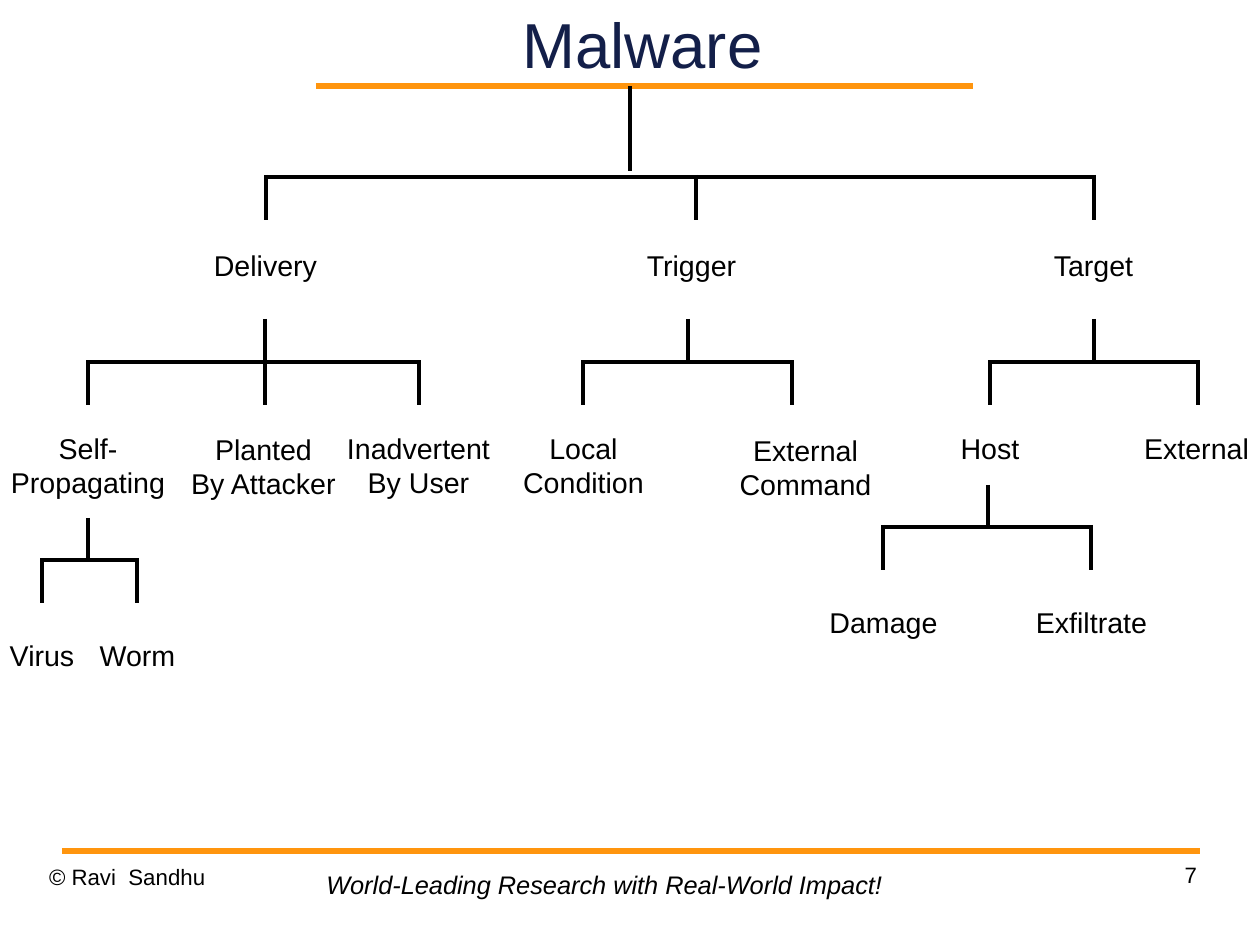
from lxml.etree import SubElement
from pptx import Presentation
from pptx.dml.color import RGBColor
from pptx.enum.shapes import MSO_CONNECTOR
from pptx.enum.text import MSO_ANCHOR, MSO_AUTO_SIZE, PP_ALIGN
from pptx.oxml.ns import qn
from pptx.util import Pt

PX = 8000
BLACK = RGBColor(0x00, 0x00, 0x00)
NAVY = RGBColor(0x13, 0x1F, 0x49)
ORANGE = RGBColor(0xFF, 0x95, 0x0E)

TITLE = "Malware"
COPYRIGHT = "© Ravi  Sandhu"
MOTTO = "World-Leading Research with Real-World Impact!"
PAGE = "7"

RULES = [(316, 973, 86), (62, 1200, 851)]

# (stem x, stem top, stem bottom, bar y, drop x positions)
BRANCHES = [
    (630, 86, 171, 177, (266, 696, 1094)),
    (265, 319, 363, 362, (88, 265, 419)),
    (688, 319, 363, 362, (583, 792)),
    (1094, 319, 364, 362, (990, 1198)),
    (988, 485, 529, 527, (883, 1091)),
    (88, 518, 562, 560, (42, 137)),
]
DROP_ABOVE, DROP_BELOW = 2, 43

# (left, top, width, lines)
LABELS = [
    (202, 242, 127, ["Delivery"]),
    (635, 242, 113, ["Trigger"]),
    (1042, 242, 103, ["Target"]),
    (-1, 425, 178, ["Self-", "Propagating"]),
    (179, 426, 169, ["Planted", "By Attacker"]),
    (335, 425, 167, ["Inadvertent", "By User"]),
    (511, 425, 145, ["Local", "Condition"]),
    (727, 427, 157, ["External", "Command"]),
    (949, 425, 82, ["Host"]),
    (1132, 425, 129, ["External"]),
    (817, 599, 133, ["Damage"]),
    (1024, 599, 135, ["Exfiltrate"]),
    (-2, 632, 88, ["Virus"]),
    (88, 632, 99, ["Worm"]),
]


def place(sp, left, top, width, height):
    """Move and size a shape in px."""
    sp.left, sp.top, sp.width, sp.height = (v * PX for v in (left, top, width, height))


def write(sp, lines, size=18, color=BLACK, align=PP_ALIGN.LEFT, italic=False,
          wrap=False, inset=True, spacing=None, anchor=MSO_ANCHOR.TOP):
    """Fill a shape with one paragraph per line."""
    tf = sp.text_frame
    tf.word_wrap = wrap
    tf.auto_size = MSO_AUTO_SIZE.NONE if wrap else MSO_AUTO_SIZE.SHAPE_TO_FIT_TEXT
    tf.vertical_anchor = anchor
    if not inset:
        tf.margin_left = tf.margin_top = tf.margin_right = tf.margin_bottom = 0
    for i, line in enumerate(lines):
        p = tf.add_paragraph() if i else tf.paragraphs[0]
        p.alignment = align
        if spacing:
            p.line_spacing = spacing
        r = p.add_run()
        r.text = line
        r.font.name = "Arial"
        r.font.size = Pt(size)
        r.font.italic = italic
        r.font.color.rgb = color


def add_text(s, left, top, width, height, lines, **fmt):
    """Add a text box."""
    sp = s.shapes.add_textbox(*(v * PX for v in (left, top, width, height)))
    write(sp, lines, **fmt)


def add_line(s, x1, y1, x2, y2, color=BLACK, weight=3):
    """Add a straight line without shadow."""
    line = s.shapes.add_connector(MSO_CONNECTOR.STRAIGHT, *(v * PX for v in (x1, y1, x2, y2)))
    line.line.color.rgb = color
    line.line.width = Pt(weight)
    SubElement(line._element.spPr, qn("a:effectLst"))


def add_branch(s, stem, top, bottom, bar, drops):
    """Draw a stem, its bar and the drops below it."""
    add_line(s, stem, top, stem, bottom)
    add_line(s, drops[0], bar, drops[-1], bar)
    for x in drops:
        add_line(s, x, bar - DROP_ABOVE, x, bar + DROP_BELOW)


def main():
    """Build the malware tree slide."""
    prs = Presentation()
    prs.slide_width, prs.slide_height = 1260 * PX, 945 * PX
    s = prs.slides.add_slide(prs.slide_layouts[5])
    for x1, x2, y in RULES:
        add_line(s, x1, y, x2, y, color=ORANGE, weight=4.31)
    title = s.shapes.title
    place(title, 275, 0, 735, 86)
    write(title, [TITLE], size=40, color=NAVY, align=PP_ALIGN.CENTER, wrap=True,
          inset=False, anchor=MSO_ANCHOR.MIDDLE)
    footer = dict(size=14, wrap=True, inset=False, spacing=1.01)
    add_text(s, 49, 863, 294, 65, [COPYRIGHT], **footer)
    add_text(s, 903, 861, 294, 65, [PAGE], align=PP_ALIGN.RIGHT, **footer)
    add_text(s, 315, 863, 581, 42, [MOTTO], size=16, italic=True)
    for branch in BRANCHES:
        add_branch(s, *branch)
    for left, top, width, lines in LABELS:
        add_text(s, left, top, width, 11 + 35 * len(lines), lines, align=PP_ALIGN.CENTER)
    prs.save("out.pptx")


if __name__ == "__main__":
    main()
